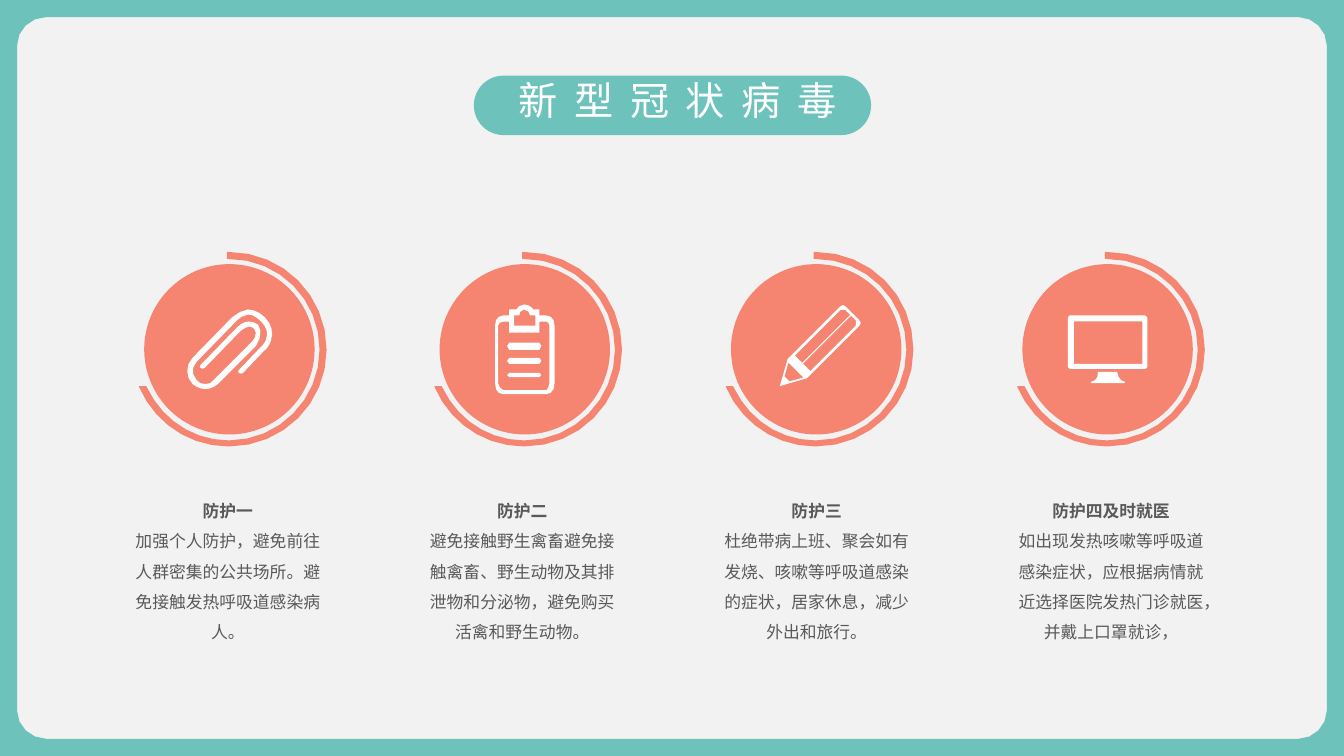
import math

import pptx
import pptx.dml.color
import pptx.enum.shapes
import pptx.enum.text
import pptx.oxml.ns
import pptx.util
from lxml import etree

TEAL = pptx.dml.color.RGBColor(0x6D, 0xC2, 0xBB)
CORAL = pptx.dml.color.RGBColor(0xF5, 0x84, 0x70)
PAPER = pptx.dml.color.RGBColor(0xF2, 0xF2, 0xF2)
GREY = pptx.dml.color.RGBColor(0x59, 0x59, 0x59)
WHITE = pptx.dml.color.RGBColor(0xFF, 0xFF, 0xFF)

SLIDE_WIDTH, SLIDE_HEIGHT = 13.33, 7.5
CAPTION_FONT = "Noto Sans CJK JP"
CAPTION_LEFT, CAPTION_PITCH = 1.22, 2.92
UNIT = pptx.util.Inches(0.01)
POINTS_PER_COMMAND = {"M": 1, "L": 1, "C": 3}

FRAME = """M 46 17 C 30 17 17 30 17 45 L 17 705 C 17 720 30 733 46 733 L 1288 733
C 1303 733 1316 720 1316 705 L 1316 45 C 1316 30 1303 17 1288 17 Z
M 0 0 L 1334 0 L 1334 750 L 0 750 Z"""

RING = """M 89 0 C 143 0 186 43 186 97 C 186 150 143 193 89 193 C 49 193 15 169 0 134
L 0 133 L 7 133 L 15 147 C 31 171 58 187 89 187 C 139 187 179 146 179 97
C 179 47 139 7 89 7 L 87 7 L 87 0 Z"""

PAPERCLIP = """M 62 0 C 53 1 47 8 46 8 L 7 48 C 0 55 0 67 7 74 C 11 77 15 79 20 79
C 24 79 29 77 32 74 L 70 36 C 75 29 76 20 72 15 C 69 13 66 12 63 12 C 59 12 55 14 52 17
L 15 55 C 14 56 14 57 15 58 C 16 59 18 59 19 58 L 55 21 C 58 19 61 17 63 17
C 65 17 67 18 68 19 C 71 22 70 28 66 32 L 28 70 C 26 73 23 74 20 74 C 16 74 13 73 11 70
C 6 65 6 57 11 52 L 50 12 C 50 12 55 6 62 5 C 67 5 71 8 75 12 C 79 16 81 20 81 25
C 81 32 75 37 75 37 L 53 60 C 52 61 52 62 53 63 C 54 64 56 64 57 63 L 78 41
C 79 41 86 34 86 25 C 86 19 84 13 79 8 C 74 3 68 0 62 0 Z"""

CLIPBOARD = """M 51 11 L 44 11 L 44 5 L 38 5 C 37 3 33 0 29 0 C 25 0 22 3 21 5 L 14 5 L 14 11
L 8 11 C 3 11 0 15 0 21 L 0 78 C 0 85 3 89 8 89 L 51 89 C 56 89 59 85 59 78 L 59 21
C 59 15 56 11 51 11 Z
M 19 11 L 24 11 C 24 9 25 5 29 5 C 32 5 35 9 35 11 L 40 11 L 40 21 L 19 21 Z
M 54 78 C 54 80 52 85 51 85 L 8 85 C 6 85 3 80 3 78 L 3 21 C 3 19 6 17 8 17 L 14 17
L 14 28 L 44 28 L 44 17 L 51 17 C 52 17 54 19 54 21 Z
M 14 38 L 44 38 L 46 41 L 44 45 L 14 45 L 12 41 Z
M 14 53 L 44 53 L 46 56 L 44 59 L 14 59 L 12 56 Z
M 14 68 L 44 68 L 46 70 L 44 72 L 14 72 L 12 70 Z"""

PENCIL = """M 13.5 102 L 0 77.5 L 0 4 C 0 1 1 0 4 0 L 23 0 C 26 0 27 1 27 4 L 27 77.5 Z
M 3 79.5 L 10 92 L 17 92 L 24 79.5 Z
M 14 2.6 L 14 70 L 24.3 70 L 24.3 6 L 21 2.6 Z
M 13 2.6 L 13 70 L 2.7 70 L 2.7 6 L 6 2.6 Z"""

MONITOR = """M 30 56 L 49 56 C 50 62 52 65 57 66 L 57 67 L 23 67 L 23 66 C 28 65 30 62 30 56 Z
M 6 6 L 6 48 L 74 48 L 74 6 Z
M 2 0 L 77 0 L 79 2 L 79 51 L 77 53 L 2 53 L 0 51 L 0 2 Z"""

MEASURES = [
    (1.38, PAPERCLIP, 0.46, 0.57, 0, "防护一",
     "加强个人防护，避免前往人群密集的公共场所。避免接触发热呼吸道感染病人。"),
    (4.31, CLIPBOARD, 0.60, 0.52, 0, "防护二",
     "避免接触野生禽畜避免接触禽畜、野生动物及其排泄物和分泌物，避免购买活禽和野生动物。"),
    (7.20, PENCIL, 0.76, 0.46, 45, "防护三",
     "杜绝带病上班、聚会如有发烧、咳嗽等呼吸道感染的症状，居家休息，减少外出和旅行。"),
    (10.09, MONITOR, 0.50, 0.63, 0, "防护四及时就医",
     "如出现发热咳嗽等呼吸道感染症状，应根据病情就近选择医院发热门诊就医，并戴上口罩就诊，"),
]


def inches(*lengths):
    """Convert lengths in inches to a list of EMU lengths."""
    return [pptx.util.Inches(length) for length in lengths]


def curve(start, *controls):
    """Return points along a cubic curve, more of them on longer curves."""
    steps = math.ceil(math.sqrt(math.dist(start, controls[-1])) / 1.6)
    points = []
    for step in range(1, steps + 1):
        t = step / steps
        weights = ((1 - t) ** 3, 3 * t * (1 - t) ** 2, 3 * t * t * (1 - t), t ** 3)
        points.append(tuple(sum(w * p[axis] for w, p in zip(weights, (start, *controls)))
                            for axis in (0, 1)))
    return points


def trace(contour):
    """Turn one contour's commands into a list of EMU points."""
    points = []
    tokens = iter(contour.split())
    for command in tokens:
        targets = [(float(next(tokens)), float(next(tokens)))
                   for _ in range(POINTS_PER_COMMAND[command])]
        points += curve(points[-1], *targets) if command == "C" else targets
    return [(x * UNIT, y * UNIT) for x, y in points]


def paint(shape, color):
    """Give a shape a plain fill without line or shadow."""
    shape.shadow.inherit = False
    shape.fill.solid()
    shape.fill.fore_color.rgb = color
    shape.line.fill.background()


def draw_outline(shapes, outline, left, top, color):
    """Draw a filled outline whose origin is at left, top."""
    first, *others = [trace(contour) for contour in outline.split("Z") if contour.strip()]
    builder = shapes.build_freeform(*first[0], scale=1.0)
    builder.add_line_segments(first[1:], close=True)
    for contour in others:
        builder.move_to(*contour[0])
        builder.add_line_segments(contour[1:], close=True)
    shape = builder.convert_to_shape(*inches(left, top))
    paint(shape, color)
    return shape


def add_heading(slide, left, top, width, height):
    """Place the pill and the slide title on it."""
    pill = slide.shapes.add_shape(pptx.enum.shapes.MSO_SHAPE.ROUNDED_RECTANGLE,
                                  *inches(left, top, width, height))
    pill.adjustments[0] = 0.5
    paint(pill, TEAL)
    title = slide.shapes.title
    pill.element.addnext(title.element)
    title.left, title.top, title.width, title.height = inches(left + 0.34, top - 0.04, 3.54, 0.57)
    frame = title.text_frame
    frame.text = "新型冠状病毒"
    frame.word_wrap = True
    frame.auto_size = pptx.enum.text.MSO_AUTO_SIZE.SHAPE_TO_FIT_TEXT
    frame.vertical_anchor = pptx.enum.text.MSO_ANCHOR.TOP
    paragraph = frame.paragraphs[0]
    paragraph.alignment = pptx.enum.text.PP_ALIGN.LEFT
    paragraph.font.size = pptx.util.Pt(28)
    paragraph.font.name = "Arial"
    paragraph.font.color.rgb = WHITE
    for properties in title.element.iter(pptx.oxml.ns.qn("a:defRPr")):
        properties.set("spc", "1200")


def add_badge(slide, left, top, icon, icon_left, icon_top, turn):
    """Group a disc, its open ring and a white icon."""
    badge = slide.shapes.add_group_shape()
    disc = badge.shapes.add_shape(pptx.enum.shapes.MSO_SHAPE.OVAL,
                                  *inches(left + 0.05, top + 0.12, 1.69, 1.69))
    paint(disc, CORAL)
    draw_outline(badge.shapes, RING, left, top, CORAL)
    symbol = draw_outline(badge.shapes, icon, left + icon_left, top + icon_top, WHITE)
    symbol.rotation = turn


def add_caption(slide, left, top, width, height, heading, advice):
    """Place a bold heading above its centred advice."""
    caption = slide.shapes.add_textbox(*inches(left, top, width, height))
    frame = caption.text_frame
    frame.word_wrap = True
    frame.text = f"{heading}\n{advice}"
    for paragraph, bold in zip(frame.paragraphs, (True, False)):
        paragraph.alignment = pptx.enum.text.PP_ALIGN.CENTER
        paragraph.line_spacing = 1.5
        paragraph.font.size = pptx.util.Pt(12)
        paragraph.font.name = CAPTION_FONT
        paragraph.font.bold = bold
        paragraph.font.color.rgb = GREY
    for properties in caption.element.iter(pptx.oxml.ns.qn("a:defRPr")):
        etree.SubElement(properties, pptx.oxml.ns.qn("a:ea"), typeface=CAPTION_FONT)


def main():
    """Build the slide and save it."""
    deck = pptx.Presentation()
    deck.slide_width, deck.slide_height = inches(SLIDE_WIDTH, SLIDE_HEIGHT)
    slide = deck.slides.add_slide(deck.slide_layouts[5])
    slide.background.fill.solid()
    slide.background.fill.fore_color.rgb = PAPER
    draw_outline(slide.shapes, FRAME, 0, 0, TEAL)
    add_heading(slide, 4.7, 0.75, 3.94, 0.59)
    for column, (left, icon, icon_left, icon_top, turn, heading, advice) in enumerate(MEASURES):
        add_caption(slide, CAPTION_LEFT + column * CAPTION_PITCH, 4.82, 2.08, 0.94,
                    heading, advice)
        add_badge(slide, left, 2.5, icon, icon_left, icon_top, turn)
    deck.save("out.pptx")


if __name__ == "__main__":
    main()
